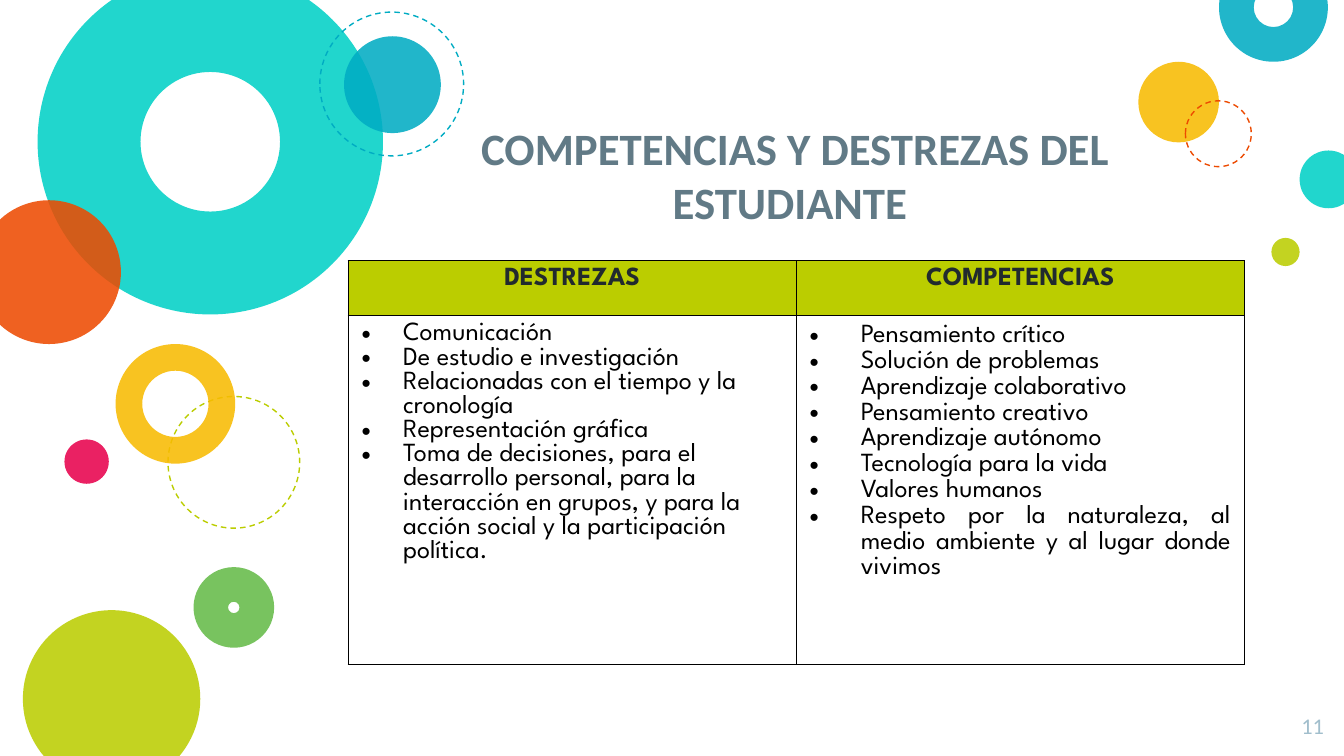
from lxml import etree
from pptx import Presentation
from pptx.dml.color import RGBColor
from pptx.enum.dml import MSO_LINE
from pptx.enum.shapes import MSO_SHAPE
from pptx.enum.text import MSO_ANCHOR, PP_ALIGN
from pptx.oxml.ns import qn
from pptx.util import Inches, Pt

OVAL, RING = MSO_SHAPE.OVAL, MSO_SHAPE.DONUT
DASH = MSO_LINE.DASH
LEFT, MID, RIGHT, JUST = PP_ALIGN.LEFT, PP_ALIGN.CENTER, PP_ALIGN.RIGHT, PP_ALIGN.JUSTIFY
TOP, BOTTOM = MSO_ANCHOR.TOP, MSO_ANCHOR.BOTTOM

COLORS = {
    "teal": "00D1C6", "blue": "00ACC3", "orange": "ED4A00", "yellow": "F8BB00",
    "lime": "BBCD00", "green": "65BB48", "pink": "E8004C", "slate": "617A86",
    "pale": "A1BECC", "dark": "212A2E", "black": "000000",
}

# left, top, size, color, hole (share of the size; None for a full disc)
DISCS = [
    (0.28, -0.23, 2.57, "teal", 0.298),
    (-0.17, 1.49, 1.07, "orange", None),
    (2.56, 0.27, 0.72, "blue", None),
    (0.86, 2.56, 0.89, "yellow", 0.223),
    (0.17, 4.54, 1.32, "lime", None),
    (1.44, 4.22, 0.6, "green", 0.429),
    (0.48, 3.27, 0.33, "pink", None),
    (8.47, 0.46, 0.6, "yellow", None),
    (9.67, 1.12, 0.43, "teal", None),
    (9.07, -0.35, 0.81, "blue", 0.319),
    (9.46, 1.77, 0.21, "lime", None),
]
BACK_LOOP = (1.25, 2.95, 0.98, "lime")
LOOPS = [(2.38, 0.09, 1.07, "blue"), (8.82, 0.75, 0.49, "orange")]

SKILLS = [
    "Comunicación",
    "De estudio e investigación",
    "Relacionadas con el tiempo y la cronología",
    "Representación gráfica",
    "Toma de decisiones, para el desarrollo personal, para la interacción en "
    "grupos, y para la acción social y la participación política.",
]
POWERS = [
    "Pensamiento crítico",
    "Solución de problemas",
    "Aprendizaje colaborativo",
    "Pensamiento creativo ",
    "Aprendizaje autónomo",
    "Tecnología para la vida",
    "Valores humanos",
    "Respeto por la naturaleza, al medio ambiente y al lugar donde vivimos",
]


def rgb(name):
    return RGBColor.from_string(COLORS[name])


def add_round(slide, kind, left, top, size):
    shape = slide.shapes.add_shape(
        kind, Inches(left), Inches(top), Inches(size), Inches(size))
    shape.shadow.inherit = False
    return shape


def add_disc(slide, left, top, size, color, hole):
    """Add a see-through disc, or a ring when it has a hole."""
    shape = add_round(slide, RING if hole else OVAL, left, top, size)
    if hole:
        shape.adjustments[0] = hole
    shape.fill.solid()
    shape.fill.fore_color.rgb = rgb(color)
    tint = shape.fill._xPr.find(".//" + qn("a:srgbClr"))
    etree.SubElement(tint, qn("a:alpha"), val="87000")
    shape.line.fill.background()


def add_loop(slide, left, top, size, color):
    """Add a dashed circle."""
    shape = add_round(slide, OVAL, left, top, size)
    shape.fill.background()
    shape.line.color.rgb = rgb(color)
    shape.line.width = Pt(0.75)
    shape.line.dash_style = DASH


def write(para, text, color, size, face, bold=False, align=LEFT):
    para.alignment = align
    run = para.add_run()
    run.text = text
    form = {"size": Pt(size), "name": face, "bold": bold}
    for key, value in form.items():
        setattr(run.font, key, value)
    run.font.color.rgb = rgb(color)


def add_text(slide, box, text, anchor, **style):
    frame = slide.shapes.add_textbox(*map(Inches, box)).text_frame
    form = {"word_wrap": True, "vertical_anchor": anchor}
    form.update({"margin_" + side: Inches(0.1)
                 for side in ("left", "top", "right", "bottom")})
    for key, value in form.items():
        setattr(frame, key, value)
    write(frame.paragraphs[0], text, **style)


def add_bullet(para, indent):
    props = para._p.get_or_add_pPr()
    props.set("marL", str(Inches(indent)))
    props.set("indent", str(-Inches(indent)))
    tint = etree.SubElement(props, qn("a:buClr"))
    etree.SubElement(tint, qn("a:srgbClr"), val=COLORS["black"])
    etree.SubElement(props, qn("a:buFont"), typeface="Arial")
    etree.SubElement(props, qn("a:buChar"), char="•")


def add_border(cell):
    props = cell._tc.get_or_add_tcPr()
    for spot, side in enumerate(("lnL", "lnR", "lnT", "lnB")):
        line = etree.Element(qn("a:" + side), w=str(Pt(0.75)))
        fill = etree.SubElement(line, qn("a:solidFill"))
        etree.SubElement(fill, qn("a:srgbClr"), val=COLORS["black"])
        props.insert(spot, line)


def fill_head(cell, text):
    cell.fill.solid()
    cell.fill.fore_color.rgb = rgb("lime")
    write(cell.text_frame.paragraphs[0], text, "dark", 14, "League Spartan", True, MID)
    add_border(cell)


def fill_list(cell, items, align, indent, space=None, after=None):
    """Fill a cell with bullets; after is the gap below the last one."""
    cell.fill.background()
    frame = cell.text_frame
    for num, item in enumerate(items):
        para = frame.add_paragraph() if num else frame.paragraphs[0]
        write(para, item, "black", 14, "League Spartan", align=align)
        if space:
            para.line_spacing = space
        if after and num == len(items) - 1:
            para.space_after = Pt(after)
        add_bullet(para, indent)
    add_border(cell)


def add_grid(slide):
    """Add the table; its second row grows with its text."""
    frame = slide.shapes.add_table(
        2, 2, Inches(2.59), Inches(1.94), Inches(6.67), Inches(3))
    grid = frame.table
    for row in grid.rows:
        row.height = Inches(0.41)
    frame.height = Inches(3)
    for col, text in enumerate(("DESTREZAS", "COMPETENCIAS")):
        fill_head(grid.cell(0, col), text)
    fill_list(grid.cell(1, 0), SKILLS, LEFT, 0.31)
    fill_list(grid.cell(1, 1), POWERS, JUST, 0.38, space=1.07, after=8)


def main():
    deck = Presentation()
    deck.slide_width = Inches(10)
    deck.slide_height = Inches(10 * 9 / 16)
    slide = deck.slides.add_slide(deck.slide_layouts[6])
    add_loop(slide, *BACK_LOOP)
    for disc in DISCS:
        add_disc(slide, *disc)
    for loop in LOOPS:
        add_loop(slide, *loop)
    add_text(slide, (3.03, 1.1, 5.77, 0.7), "COMPETENCIAS Y DESTREZAS DEL ESTUDIANTE ",
             BOTTOM, color="slate", size=24, face="Calibri", bold=True, align=MID)
    add_text(slide, (9.44, 5.2, 0.51, 0.43), "11",
             TOP, color="pale", size=12, face="Calibri", align=RIGHT)
    add_grid(slide)
    deck.save("out.pptx")


if __name__ == "__main__":
    main()
